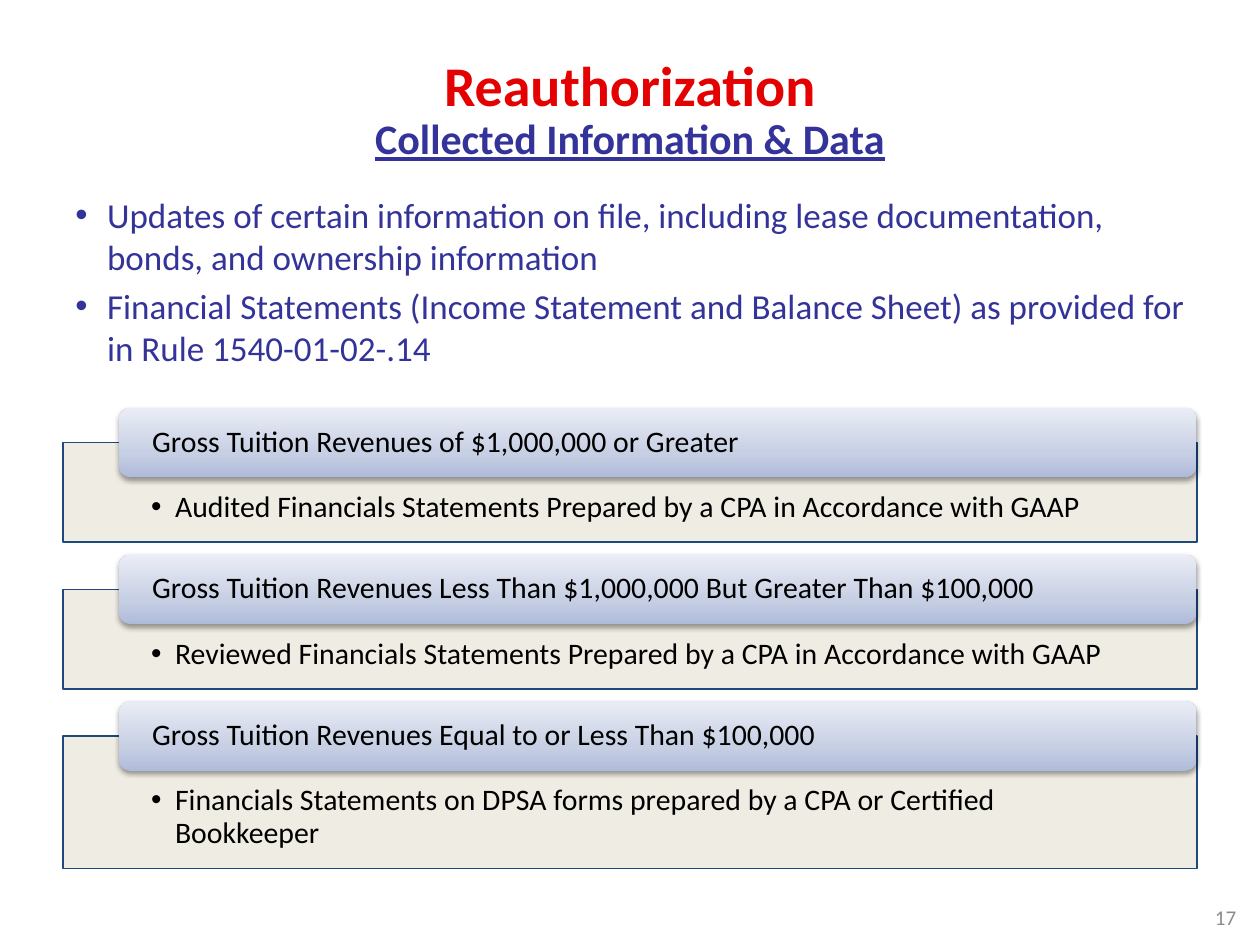
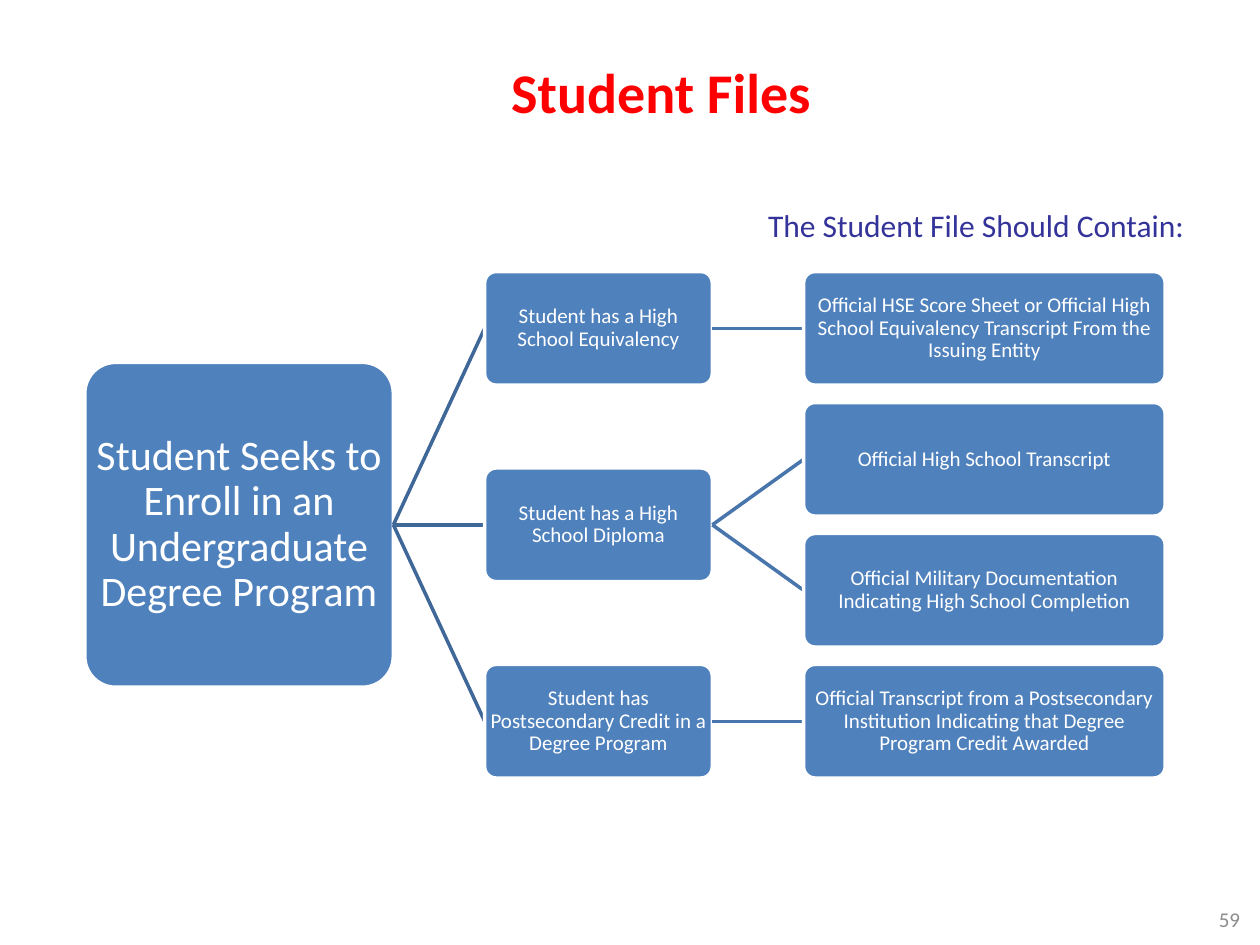
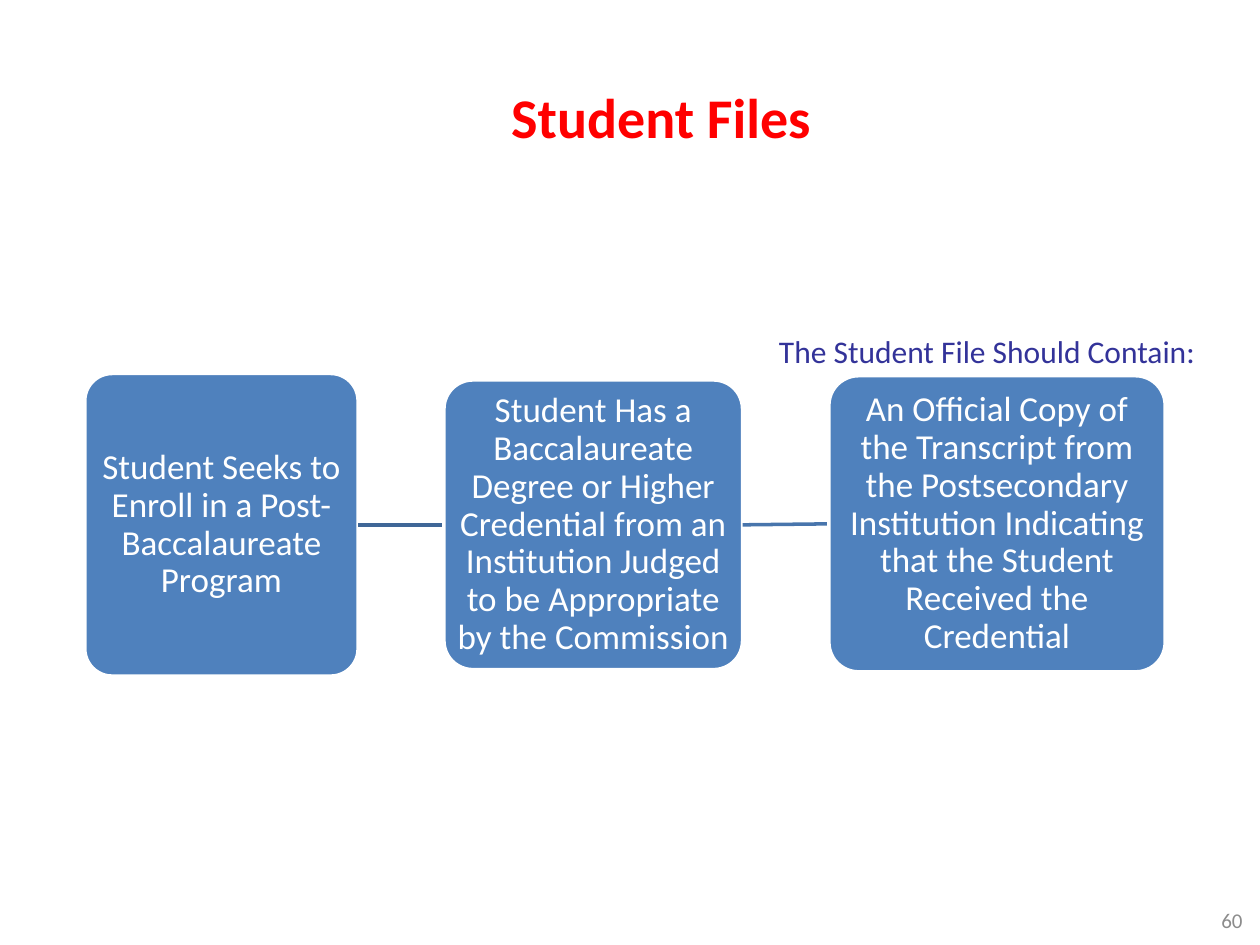
import lxml.etree
import pptx
import pptx.dml.color
import pptx.enum.shapes
import pptx.enum.text
import pptx.oxml.ns
import pptx.util

Cm = pptx.util.Cm
Pt = pptx.util.Pt
ALIGN = pptx.enum.text.PP_ALIGN
ANCHOR = pptx.enum.text.MSO_ANCHOR
SHAPE = pptx.enum.shapes.MSO_SHAPE
qn = pptx.oxml.ns.qn

FONT = "Calibri"
COLOURS = {
    "white": "FFFFFF", "black": "000000", "number": "8C8C8C",
    "title": "FF0000", "dark title": "E30101", "text": "333399",
    "panel": "EEECE1", "panel line": "1F497D",
    "tab bottom": "AFBBDA", "tab middle": "C7CFE4", "tab top": "EAEDF5",
    "node": "4F81BD", "first link": "3F6797", "second link": "4875AC",
}
TITLE = {"size": Pt(32), "bold": True}
SUBTITLE = {"size": Pt(24), "bold": True, "underline": True}
DEFAULT_MARGINS = (0.25, 0.13, 0.25, 0.13)
FILE_HEADING = "The Student File Should Contain:"


def colour(name):
    return pptx.dml.color.RGBColor.from_string(COLOURS[name])


def add_element(parent, tag, **attributes):
    return lxml.etree.SubElement(parent, qn(tag), attributes)


# Text
def set_frame(shape, margins=DEFAULT_MARGINS, anchor=ANCHOR.MIDDLE):
    frame = shape.text_frame
    frame.word_wrap = True
    frame.vertical_anchor = anchor
    sides = ("margin_left", "margin_top", "margin_right", "margin_bottom")
    for side, margin in zip(sides, margins):
        setattr(frame, side, Cm(margin))
    return frame


def add_bullet(paragraph, indent):
    properties = paragraph._p.get_or_add_pPr()
    properties.set("marL", str(Cm(indent)))
    properties.set("indent", str(-Cm(indent)))
    add_element(properties, "a:buFont", typeface="Arial")
    add_element(properties, "a:buChar", char="•")


def write(frame, lines, align=ALIGN.LEFT, spacing=None, space_before=0, indent=None):
    """Each line is (text, colour name, font values)."""
    for index, (text, colour_name, values) in enumerate(lines):
        paragraph = frame.add_paragraph() if index else frame.paragraphs[0]
        paragraph.alignment = align
        if spacing:
            paragraph.line_spacing = spacing
        if index and space_before:
            paragraph.space_before = Pt(space_before)
        if indent:
            add_bullet(paragraph, indent)
        run = paragraph.add_run()
        run.text = text
        run.font.color.rgb = colour(colour_name)
        for name, value in {"name": FONT, **values}.items():
            setattr(run.font, name, value)


def add_text(slide, box, lines, anchor=ANCHOR.MIDDLE, **layout):
    shape = slide.shapes.add_textbox(*map(Cm, box))
    write(set_frame(shape, anchor=anchor), lines, **layout)


def add_title(slide, box, lines):
    add_text(slide, box, lines, align=ALIGN.CENTER, spacing=0.9)


def add_file_title(slide, top):
    add_title(slide, (2.75, top, 21.16, 1.9), [("Student Files", "title", TITLE)])


def add_file_heading(slide, left, top):
    add_text(slide, (left, top, 10.16, 1.02),
             [(FILE_HEADING, "text", {"size": Pt(18)})],
             ANCHOR.TOP, align=ALIGN.CENTER)


def add_page_number(slide, left, top, number):
    add_text(slide, (left, top, 5.92, 1.02),
             [(str(number), "number", {"size": Pt(12)})], align=ALIGN.RIGHT)


# Shapes
def add_box(slide, kind, box):
    shape = slide.shapes.add_shape(kind, *map(Cm, box))
    shape.shadow.inherit = False
    return shape


def add_panel(slide, top, height, text):
    panel = add_box(slide, SHAPE.RECTANGLE, (1.27, top, 22.86, height))
    panel.fill.solid()
    panel.fill.fore_color.rgb = colour("panel")
    fill_colour = panel.element.spPr.find(qn("a:solidFill")).find(qn("a:srgbClr"))
    add_element(fill_colour, "a:alpha", val="90000")
    panel.line.color.rgb = colour("panel line")
    panel.line.width = Pt(0.75)
    frame = set_frame(panel, (1.78, 0.99, 1.78, 0.33), ANCHOR.TOP)
    write(frame, [(text, "black", {"size": Pt(17)})], spacing=0.9, indent=0.48)


def add_tab(slide, top, text):
    tab = add_box(slide, SHAPE.ROUNDED_RECTANGLE, (2.4, top, 21.72, 1.4))
    tab.line.fill.background()
    tab.fill.gradient()
    tab.fill.gradient_angle = 90
    properties = tab.element.spPr
    stops = properties.find(qn("a:gradFill")).find(qn("a:gsLst"))
    stops.clear()
    for position, name in ((0, "tab bottom"), (35, "tab middle"), (100, "tab top")):
        stop = add_element(stops, "a:gs", pos=str(position * 1000))
        add_element(stop, "a:srgbClr", val=COLOURS[name])
    shadow = add_element(properties.find(qn("a:effectLst")), "a:outerShdw",
                         blurRad=str(Pt(3.1)), dist=str(Pt(1.6)),
                         dir="5400000", rotWithShape="0")
    shadow_colour = add_element(shadow, "a:srgbClr", val=COLOURS["black"])
    add_element(shadow_colour, "a:alpha", val="38000")
    write(set_frame(tab, (0.6, 0, 0.6, 0)),
          [(text, "black", {"size": Pt(17)})], spacing=0.9)


def add_node(slide, left, middle, width, height, text, size):
    node = add_box(slide, SHAPE.ROUNDED_RECTANGLE,
                   (left, middle - height / 2, width, height))
    node.adjustments[0] = 0.1
    node.fill.solid()
    node.fill.fore_color.rgb = colour("node")
    node.line.color.rgb = colour("white")
    node.line.width = Pt(2)
    write(set_frame(node, (0.03,) * 4), [(text, "white", {"size": Pt(size)})],
          align=ALIGN.CENTER, spacing=0.9)
    return node


def link(slide, start, end, colour_name):
    connector = slide.shapes.add_connector(
        pptx.enum.shapes.MSO_CONNECTOR.STRAIGHT, 0, 0, 0, 0)
    connector.begin_connect(start, 3)
    connector.end_connect(end, 1)
    connector.line.color.rgb = colour(colour_name)
    connector.line.width = Pt(2)
    add_element(connector.element.spPr, "a:effectLst")
    # The outline of the end node covers the tip of the line
    end.element.addprevious(connector.element)


# Slides
def build_reauthorization(slide):
    add_page_number(slide, 19.25, 17.98, 17)
    add_title(slide, (2.54, 1.07, 20.32, 2.34), [
        ("Reauthorization", "dark title", TITLE),
        ("Collected Information & Data", "text", SUBTITLE),
    ])
    updates = (
        "Updates of certain information on file, including lease documentation, "
        "bonds, and ownership information",
        "Financial Statements (Income Statement and Balance Sheet) as provided "
        "for in Rule 1540-01-02-.14",
    )
    add_text(slide, (1.27, 3.78, 22.95, 4.06),
             [(text, "text", {"size": Pt(20)}) for text in updates],
             ANCHOR.TOP, space_before=4, indent=0.64)
    revenue_groups = (
        ("Gross Tuition Revenues of $1,000,000 or Greater", 2.01,
         "Audited Financials Statements Prepared by a CPA in Accordance with GAAP"),
        ("Gross Tuition Revenues Less Than $1,000,000 But Greater Than $100,000", 2.01,
         "Reviewed Financials Statements Prepared by a CPA in Accordance with GAAP"),
        ("Gross Tuition Revenues Equal to or Less Than $100,000", 2.67,
         "Financials Statements on DPSA forms prepared by a CPA or Certified Bookkeeper"),
    )
    for index, (heading, height, requirement) in enumerate(revenue_groups):
        top = 8.22 + index * 2.96
        add_panel(slide, top + 0.7, height, requirement)
        add_tab(slide, top, heading)


def build_undergraduate(slide):
    add_page_number(slide, 19.33, 18.01, 59)
    add_file_title(slide, 0.98)
    first_row, pitch = 6.62, 2.64
    root = add_node(slide, 1.71, first_row + 1.5 * pitch, 6.22, 6.55,
                    "Student Seeks to Enroll in an Undergraduate Degree Program", 24)
    branches = (
        ("Student has a High School Equivalency",
         ("Official HSE Score Sheet or Official High School Equivalency "
          "Transcript From the Issuing Entity",)),
        ("Student has a High School Diploma",
         ("Official High School Transcript",
          "Official Military Documentation Indicating High School Completion")),
        ("Student has Postsecondary Credit in a Degree Program",
         ("Official Transcript from a Postsecondary Institution Indicating "
          "that Degree Program Credit Awarded",)),
    )
    row = 0
    for condition, documents in branches:
        middle = first_row + (row + (len(documents) - 1) / 2) * pitch
        branch = add_node(slide, 9.77, middle, 4.59, 2.29, condition, 12)
        link(slide, root, branch, "first link")
        for document in documents:
            leaf = add_node(slide, 16.2, first_row + row * pitch, 7.29, 2.29,
                            document, 12)
            link(slide, branch, leaf, "second link")
            row += 1
    add_file_heading(slide, 14.6, 4.02)


def build_post_baccalaureate(slide):
    add_page_number(slide, 19.38, 18.03, 60)
    add_file_title(slide, 1.47)
    program = add_node(slide, 1.71, 10.58, 5.51, 6.1,
                       "Student Seeks to Enroll in a Post-Baccalaureate Program", 20)
    credential = add_node(slide, 8.95, 10.58, 6.02, 5.84,
                          "Student Has a Baccalaureate Degree or Higher Credential from "
                          "an Institution Judged to be Appropriate by the Commission", 20)
    transcript = add_node(slide, 16.71, 10.56, 6.78, 5.97,
                          "An Official Copy of the Transcript from the Postsecondary "
                          "Institution Indicating that the Student Received the "
                          "Credential", 20)
    link(slide, program, credential, "first link")
    link(slide, credential, transcript, "second link")
    add_file_heading(slide, 14.82, 6.56)


def main():
    presentation = pptx.Presentation()
    presentation.slide_width = Cm(25.4)
    presentation.slide_height = Cm(19.05)
    for build in (build_reauthorization, build_undergraduate, build_post_baccalaureate):
        build(presentation.slides.add_slide(presentation.slide_layouts[6]))
    presentation.save("out.pptx")


if __name__ == "__main__":
    main()
